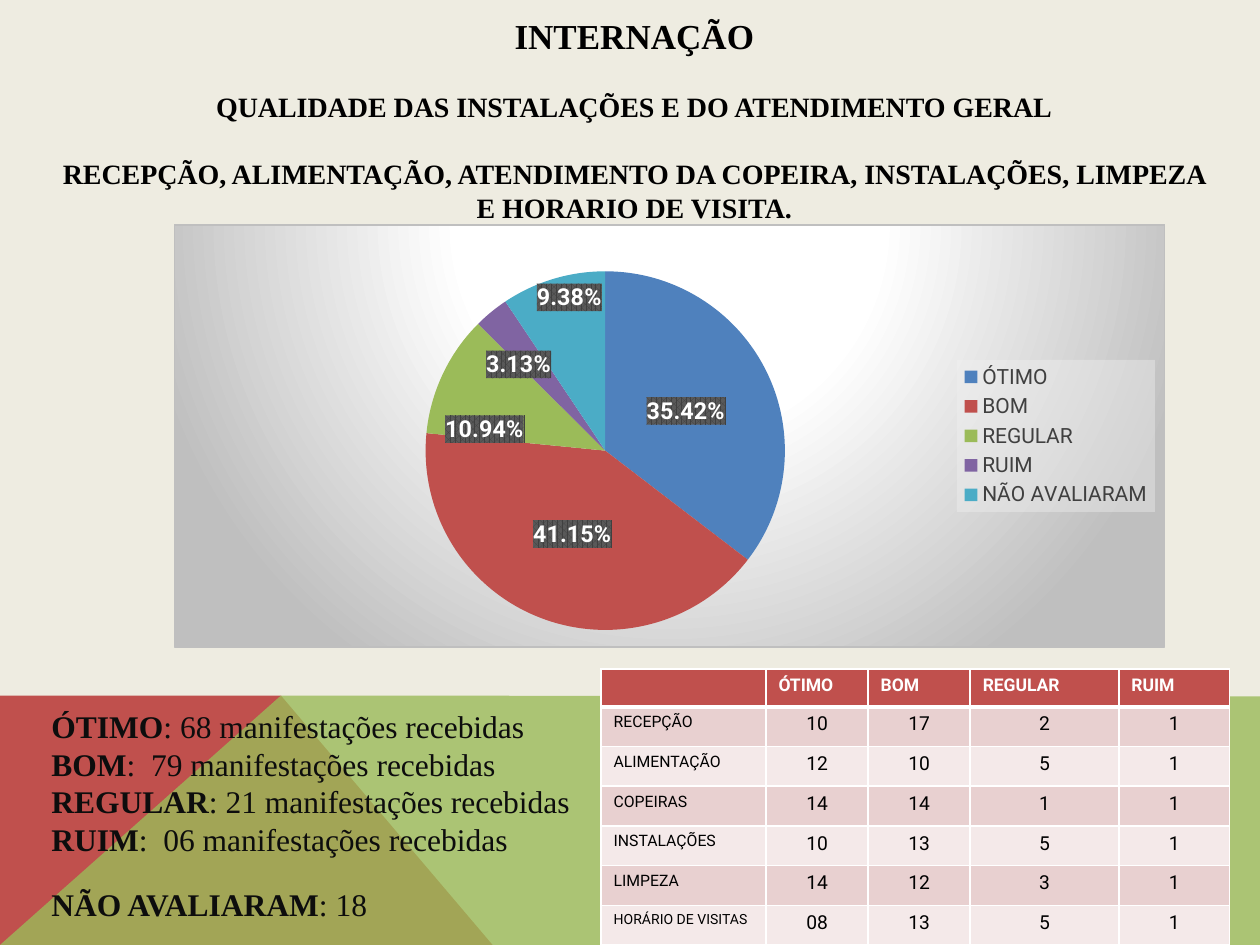
from copy import deepcopy
from lxml.etree import SubElement
from pptx import Presentation
from pptx.chart.data import CategoryChartData
from pptx.dml.color import RGBColor
from pptx.enum.chart import XL_CHART_TYPE, XL_LABEL_POSITION, XL_LEGEND_POSITION
from pptx.enum.text import MSO_ANCHOR, PP_ALIGN
from pptx.oxml import parse_xml
from pptx.oxml.ns import nsdecls, qn
from pptx.util import Inches, Pt

WIDE, HIGH = Inches(10), Inches(7.5)
SERIF, SANS = "Times New Roman", "Roboto"

CREAM = RGBColor(0xEE, 0xEC, 0xE1)
RED = RGBColor(0xC0, 0x50, 0x4D)
GREEN = RGBColor(0x9B, 0xBB, 0x59)
BLUE = RGBColor(0x4F, 0x81, 0xBD)
PURPLE = RGBColor(0x80, 0x64, 0xA2)
TEAL = RGBColor(0x4B, 0xAC, 0xC6)
BLACK = RGBColor(0, 0, 0)
INK = RGBColor(0x0D, 0x0D, 0x0D)
GREY = RGBColor(0x40, 0x40, 0x40)
WHITE = RGBColor(0xFF, 0xFF, 0xFF)
BANDS = RGBColor(0xF4, 0xE9, 0xE9), RGBColor(0xE8, 0xD0, 0xD0)

TITLE = [
    ("INTERNAÇÃO", 20, 0),
    ("QUALIDADE DAS INSTALAÇÕES E DO ATENDIMENTO GERAL", 16, 19),
    ("RECEPÇÃO, ALIMENTAÇÃO, ATENDIMENTO DA COPEIRA, "
     "INSTALAÇÕES, LIMPEZA E HORARIO DE VISITA.", 16, 19),
]
NOTES = [
    ("ÓTIMO", ": 68 manifestações recebidas", 0),
    ("BOM", ":  79 manifestações recebidas", 0),
    ("REGULAR", ": 21 manifestações recebidas", 0),
    ("RUIM", ":  06 manifestações recebidas", 0),
    ("NÃO AVALIARAM", ": 18", 15.5),
]
SLICES = [
    ("ÓTIMO", 35.42, BLUE),
    ("BOM", 41.15, RED),
    ("REGULAR", 10.94, GREEN),
    ("RUIM", 3.13, PURPLE),
    ("NÃO AVALIARAM", 9.38, TEAL),
]
# Label shifts as shares of the chart, by slice
SHIFTS = {2: (-0.04, 0.04), 3: (-0.03, -0.04), 4: (-0.01, -0.16)}
HEAD = ["", "ÓTIMO", "BOM", "REGULAR", "RUIM"]
ROWS = [
    ("RECEPÇÃO", "10", "17", "2", "1"),
    ("ALIMENTAÇÃO", "12", "10", "5", "1"),
    ("COPEIRAS", "14", "14", "1", "1"),
    ("INSTALAÇÕES", "10", "13", "5", "1"),
    ("LIMPEZA", "14", "12", "3", "1"),
    ("HORÁRIO DE VISITAS", "08", "13", "5", "1"),
]
COLS = [1.31, 0.81, 0.81, 1.18, 0.88]

PANEL = f"""<c:spPr {nsdecls('c', 'a')}><a:gradFill><a:gsLst>
<a:gs pos="0"><a:srgbClr val="FFFFFF"/></a:gs>
<a:gs pos="39000"><a:srgbClr val="FFFFFF"/></a:gs>
<a:gs pos="100000"><a:srgbClr val="BFBFBF"/></a:gs></a:gsLst>
<a:path path="circle"><a:fillToRect l="50000" t="-80000" r="50000" b="180000"/></a:path>
</a:gradFill><a:ln w="9525"><a:solidFill><a:srgbClr val="BFBFBF"/></a:solidFill></a:ln></c:spPr>"""
PLATE = f"""<c:spPr {nsdecls('c', 'a')}><a:pattFill prst="pct75">
<a:fgClr><a:srgbClr val="404040"/></a:fgClr><a:bgClr><a:srgbClr val="595959"/></a:bgClr>
</a:pattFill></c:spPr>"""
VEIL = f"""<c:spPr {nsdecls('c', 'a')}><a:solidFill><a:srgbClr val="F2F2F2">
<a:alpha val="39000"/></a:srgbClr></a:solidFill></c:spPr>"""


def place(*box):
    """Turn percent shares of the slide into left, top, width, height."""
    return [int(side * share / 100) for side, share in zip((WIDE, HIGH) * 2, box)]


def style(font, color, **form):
    for key, value in form.items():
        setattr(font, key, value)
    font.color.rgb = color


def write(para, text, color, **form):
    run = para.add_run()
    run.text = text
    style(run.font, color, **form)


def layout(**parts):
    modes = "".join(f'<c:{k}Mode val="edge"/>' for k in "xy" if "w" in parts)
    sizes = "".join(f'<c:{k} val="{v}"/>' for k, v in parts.items())
    target = '<c:layoutTarget val="inner"/>' if "w" in parts else ""
    return parse_xml(f"<c:layout {nsdecls('c')}><c:manualLayout>{target}{modes}{sizes}"
                     "</c:manualLayout></c:layout>")


def add_area(slide, points, color, alpha=None):
    spots = [place(*point) for point in points]
    path = slide.shapes.build_freeform(*spots[0], scale=1)
    path.add_line_segments(spots[1:], close=True)
    area = path.convert_to_shape()
    area.shadow.inherit = False
    area.fill.solid()
    area.fill.fore_color.rgb = color
    area.line.fill.background()
    if alpha:
        tint = area.fill._xPr.find(".//" + qn("a:srgbClr"))
        SubElement(tint, qn("a:alpha"), val=str(alpha * 1000))


def add_text(slide, box, lines, align):
    """Each line is a list of (text, color, format) runs and a space before."""
    frame = slide.shapes.add_textbox(*place(*box)).text_frame
    frame.word_wrap = True
    for i, (runs, gap) in enumerate(lines):
        para = frame.add_paragraph() if i else frame.paragraphs[0]
        para.alignment, para.space_before = align, Pt(gap)
        for text, color, form in runs:
            write(para, text, color, name=SERIF, **form)


def add_pie(slide, box):
    data = CategoryChartData()
    names, values, colors = zip(*SLICES)
    data.categories = names
    data.add_series("Series 1", values)
    chart = slide.shapes.add_chart(XL_CHART_TYPE.PIE, *place(*box), data).chart
    style(chart.font, BLACK, name=SANS, size=Pt(10))
    chart.has_title = False
    chart.plots[0].vary_by_categories = True
    series = chart.plots[0].series[0]
    for i, color in enumerate(colors):
        fill = series.points[i].format.fill
        fill.solid()
        fill.fore_color.rgb = color

    # Labels: one shared look, three of them moved
    labels = series.data_labels
    form = {"show_value": True, "show_percentage": False, "number_format": '0.00"%"',
            "number_format_is_linked": False, "position": XL_LABEL_POSITION.CENTER}
    for key, value in form.items():
        setattr(labels, key, value)
    style(labels.font, WHITE, name=SANS, size=Pt(13.3), bold=True)
    root = chart.element
    group = root.find(".//" + qn("c:ser")).find(qn("c:dLbls"))
    group.find(qn("c:txPr")).addprevious(parse_xml(PLATE))
    look = [group.find(qn(f"c:{tag}")) for tag in ("numFmt", "spPr", "txPr")]
    for i, (x, y) in SHIFTS.items():
        series.points[i].data_label.position = XL_LABEL_POSITION.CENTER
        label = group.findall(qn("c:dLbl"))[-1]
        for old in label.findall(qn("c:spPr")) + label.findall(qn("c:txPr")):
            label.remove(old)
        label[0].addnext(layout(x=x, y=y))
        for j, part in enumerate(look):
            label.insert(2 + j, deepcopy(part))

    # Legend, plot place and panel
    chart.has_legend = True
    legend = chart.legend
    legend.position, legend.include_in_layout = XL_LEGEND_POSITION.RIGHT, False
    style(legend.font, GREY, name=SANS, size=Pt(12))
    node = root.find(".//" + qn("c:legend"))
    spot = layout(x=0.79, y=0.32, w=0.2, h=0.36)
    spot[0].remove(spot[0][0])
    node.find(qn("c:legendPos")).addnext(spot)
    node.find(qn("c:txPr")).addprevious(parse_xml(VEIL))
    plot = root.find(".//" + qn("c:plotArea"))
    for old in plot.findall(qn("c:layout")):
        plot.remove(old)
    plot.insert(0, layout(x=0.25, y=0.11, w=0.37, h=0.85))
    root.find(qn("c:chart")).addnext(parse_xml(PANEL))


def edge(cell, base):
    """White borders, with the lower one as wide as base."""
    props = cell._tc.get_or_add_tcPr()
    for i, side in enumerate("LRTB"):
        width = Pt(base if side == "B" else 1)
        props.insert(i, parse_xml(
            f'<a:ln{side} {nsdecls("a")} w="{width}"><a:solidFill>'
            f'<a:srgbClr val="{WHITE}"/></a:solidFill></a:ln{side}>'))


def add_grid(slide, box):
    grid = slide.shapes.add_table(len(ROWS) + 1, len(COLS), *place(*box)).table
    for col, width in zip(grid.columns, COLS):
        col.width = Inches(width)
    for r, texts in enumerate([HEAD, *ROWS]):
        grid.rows[r].height = Inches(0.315 if r else 0.3)
        for c, text in enumerate(texts):
            cell = grid.cell(r, c)
            cell.vertical_anchor = MSO_ANCHOR.TOP
            cell.fill.solid()
            cell.fill.fore_color.rgb = BANDS[r % 2] if r else RED
            edge(cell, 1 if r else 3)
            para = cell.text_frame.paragraphs[0]
            para.alignment = PP_ALIGN.CENTER if r and c else PP_ALIGN.LEFT
            size = 10 if not r else 11 if c else 8 if r == len(ROWS) else 9
            if text:
                write(para, text, BLACK if r else WHITE,
                      name=SANS, size=Pt(size), bold=not r)
            else:  # keeps the empty cell from stretching its row
                SubElement(para._p, qn("a:endParaRPr"), sz=str(size * 100))


def main():
    deck = Presentation()
    deck.slide_width, deck.slide_height = WIDE, HIGH
    slide = deck.slides.add_slide(deck.slide_layouts[6])
    slide.background.fill.solid()
    slide.background.fill.fore_color.rgb = CREAM

    # Base areas
    add_area(slide, [(0, 100), (0, 73.6), (22.3, 73.6), (39.1, 100)], RED)
    add_area(slide, [(0, 100), (22.3, 73.6), (100, 73.7), (100, 100)], GREEN, 80)

    # Title and counts
    title = [([(text, BLACK, {"size": Pt(size), "bold": True})], gap)
             for text, size, gap in TITLE]
    add_text(slide, (3.1, 0.9, 94.5, 23), title, PP_ALIGN.CENTER)
    notes = [([(name, INK, {"size": Pt(18), "bold": True}),
               (rest, INK, {"size": Pt(18), "bold": False})], gap)
             for name, rest, gap in NOTES]
    add_text(slide, (3.1, 74.13, 44.5, 25.8), notes, PP_ALIGN.LEFT)

    # Chart and table
    add_pie(slide, (13.8, 23.73, 78.7, 44.8))
    add_grid(slide, (47.7, 70.8, 49.9, 29.2))
    deck.save("out.pptx")


if __name__ == "__main__":
    main()
